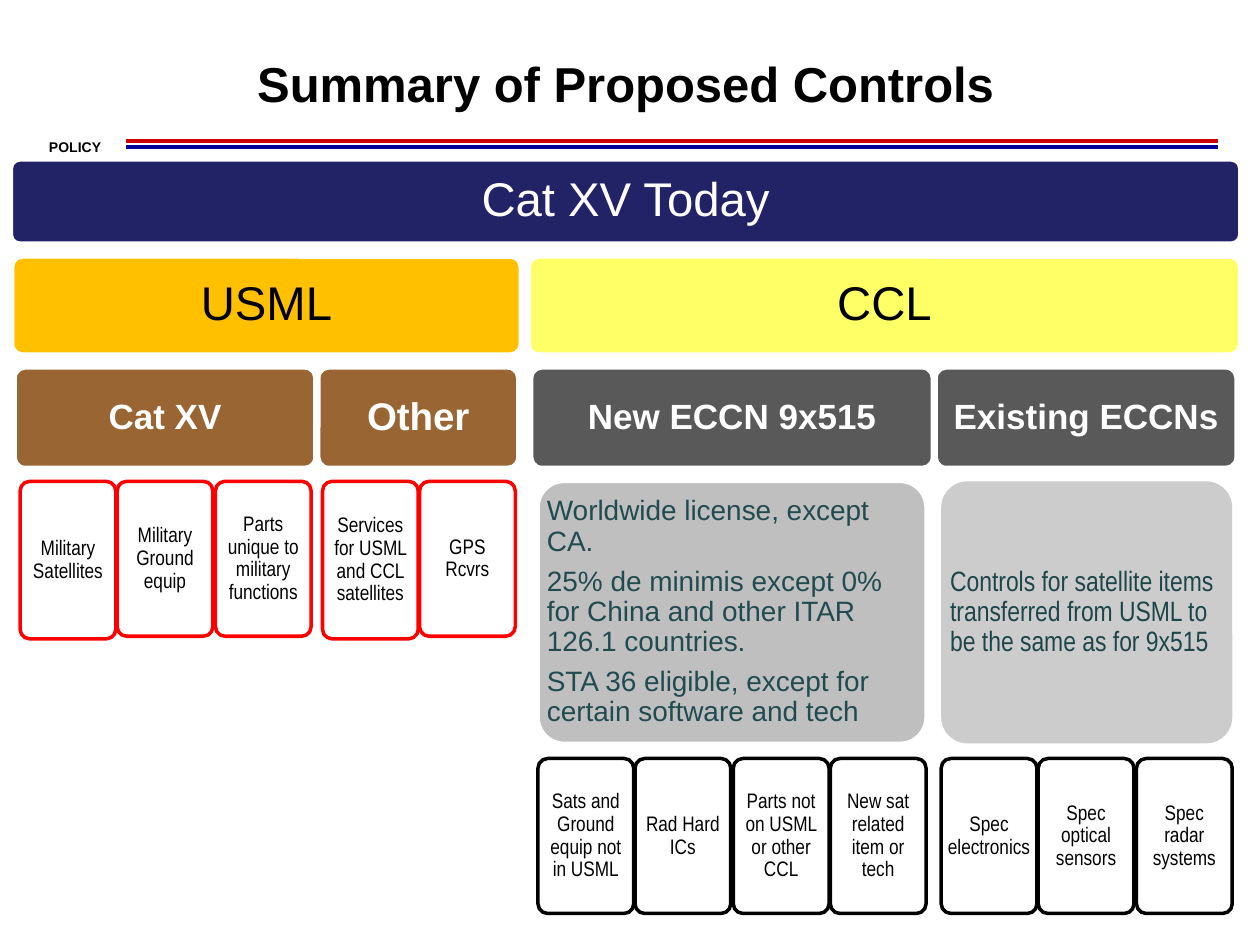
from lxml.etree import SubElement
from pptx import Presentation
from pptx.dml.color import RGBColor
from pptx.enum.shapes import MSO_CONNECTOR, MSO_SHAPE
from pptx.enum.text import MSO_ANCHOR, PP_ALIGN
from pptx.oxml.ns import qn
from pptx.util import Emu, Pt

SCALE = 9144  # EMU per px, 100 px to the inch
SANS, SLIM = "Arial", "Arial Narrow"
WHITE, BLACK, RED = "FFFFFF", "000000", "FF0000"
BROWN, GREY = "996633", "595959"
LEAF_W, GAP = 76, 11


def px(num):
    return Emu(round(num * SCALE))


def rgb(code):
    return RGBColor.from_string(code)


def write(shape, text, size, color, bold=False, font=SANS, align=PP_ALIGN.CENTER, after=0):
    frame = shape.text_frame
    frame.text = text
    frame.vertical_anchor = MSO_ANCHOR.MIDDLE
    for para in frame.paragraphs:
        para.alignment = align
        para.line_spacing = 0.9
        para.space_after = Pt(after)
        for run in para.runs:
            run.font.size = Pt(size)
            run.font.name = font
            run.font.bold = bold
            run.font.color.rgb = rgb(color)


def card(slide, box, text, size, color, fill=None, line=WHITE, inset=11, **style):
    left, top, wide, high = box
    shape = slide.shapes.add_shape(MSO_SHAPE.ROUNDED_RECTANGLE, *map(px, box))
    shape.adjustments[0] = 0.1
    shape.shadow.inherit = False
    if fill:
        shape.fill.solid()
        shape.fill.fore_color.rgb = rgb(fill)
    else:
        shape.fill.background()
    if line:
        shape.line.color.rgb = rgb(line)
        shape.line.width = Pt(2)
    else:
        shape.line.fill.background()
    # The rounded corners already push the text in a little
    frame = shape.text_frame
    frame.word_wrap = True
    pad = px(max(0, inset - 0.029 * min(wide, high)))
    frame.margin_left = frame.margin_right = pad
    frame.margin_top = frame.margin_bottom = pad
    write(shape, text, size, color, after=round(size * 0.35, 1), **style)


def rule(slide, left, top, wide, color):
    line = slide.shapes.add_connector(
        MSO_CONNECTOR.STRAIGHT, px(left), px(top), px(left + wide), px(top))
    line.line.color.rgb = rgb(color)
    line.line.width = Pt(2.25)
    SubElement(line._element.spPr, qn("a:effectLst"))


def header(slide, left, top, wide):
    tag = slide.shapes.add_textbox(px(left + 13), px(top + 87), px(62), px(23))
    tag.text_frame.word_wrap = False
    write(tag, "POLICY", 8, BLACK, bold=True, align=PP_ALIGN.LEFT)
    rule(slide, left + 84, top + 93, 867, "CC0000")
    rule(slide, left + 84, top + 98, 867, "000099")
    title = slide.shapes.add_textbox(px(left), px(top), px(wide), px(100))
    title.text_frame.word_wrap = True
    write(title, "Summary of Proposed Controls", 28, BLACK, bold=True)


def leaves(slide, left, top, names, line, first=123):
    for i, name in enumerate(names):
        high = 123 if i else first
        box = (left + i * 155 // 2, top, LEAF_W, high)
        card(slide, box, name, 12, BLACK, line=line, inset=5, font=SLIM)


def branch(slide, left, top, wide, head, size, fill, names, inner, note=None):
    card(slide, (left, top, wide, 79), head, size, WHITE, fill, inset=8, bold=True)
    start, low = left + inner, top + 79 + GAP
    if not note:
        leaves(slide, start, low, names, RED, first=125)
        return
    text, color, back, edge, font = note
    card(slide, (start, low, wide - 2 * inner + (inner == 4), 208), text, 16, color,
         back, edge, inset=7, font=font, align=PP_ALIGN.LEFT)
    leaves(slide, start, low + 220, names, BLACK)


def usml(slide, left, top, wide):
    card(slide, (left, top, wide, 77), "USML", 27, BLACK, "FFC000")
    low = top + 77 + GAP
    branch(slide, left + 2, low, 238, "Cat XV", 20, BROWN,
           ["Military Satellites", "Military Ground equip",
            "Parts unique to military functions"], 4)
    branch(slide, left + 243, low, 158, "Other", 22, BROWN,
           ["Services for USML and CCL satellites", "GPS Rcvrs"], 3)


def ccl(slide, left, top, wide):
    card(slide, (left, top, wide, 77), "CCL", 27, BLACK, "FFFF66")
    low = top + 77 + GAP
    terms = "\n".join([
        "Worldwide license, except CA.",
        "25% de minimis except 0% for China and other ITAR 126.1 countries.",
        "STA 36 eligible, except for certain software and tech"])
    branch(slide, left + 2, low, 318, "New ECCN 9x515", 20, GREY,
           ["Sats and Ground equip not in USML", "Rad Hard ICs",
            "Parts not on USML or other CCL", "New sat related item or tech"], 5,
           (terms, "224B50", "BFBFBF", WHITE, SANS))
    same = "Controls for satellite items transferred from USML to be the same as for 9x515"
    branch(slide, left + 323, low, 238, "Existing ECCNs", 20, GREY,
           ["Spec electronics", "Spec optical sensors", "Spec radar systems"], 4,
           (same, "1E4649", "CCCCCC", None, SLIM))


def main():
    deck = Presentation()
    deck.slide_width, deck.slide_height = px(1000), px(750)
    slide = deck.slides.add_slide(deck.slide_layouts[6])
    header(slide, 16, 19, 961)
    # Tree of controls, from the root down
    card(slide, (9, 127, 975, 66), "Cat XV Today", 27, WHITE, "222267")
    usml(slide, 10, 204, 403)
    ccl(slide, 420, 204, 564)
    deck.save("out.pptx")


if __name__ == "__main__":
    main()
